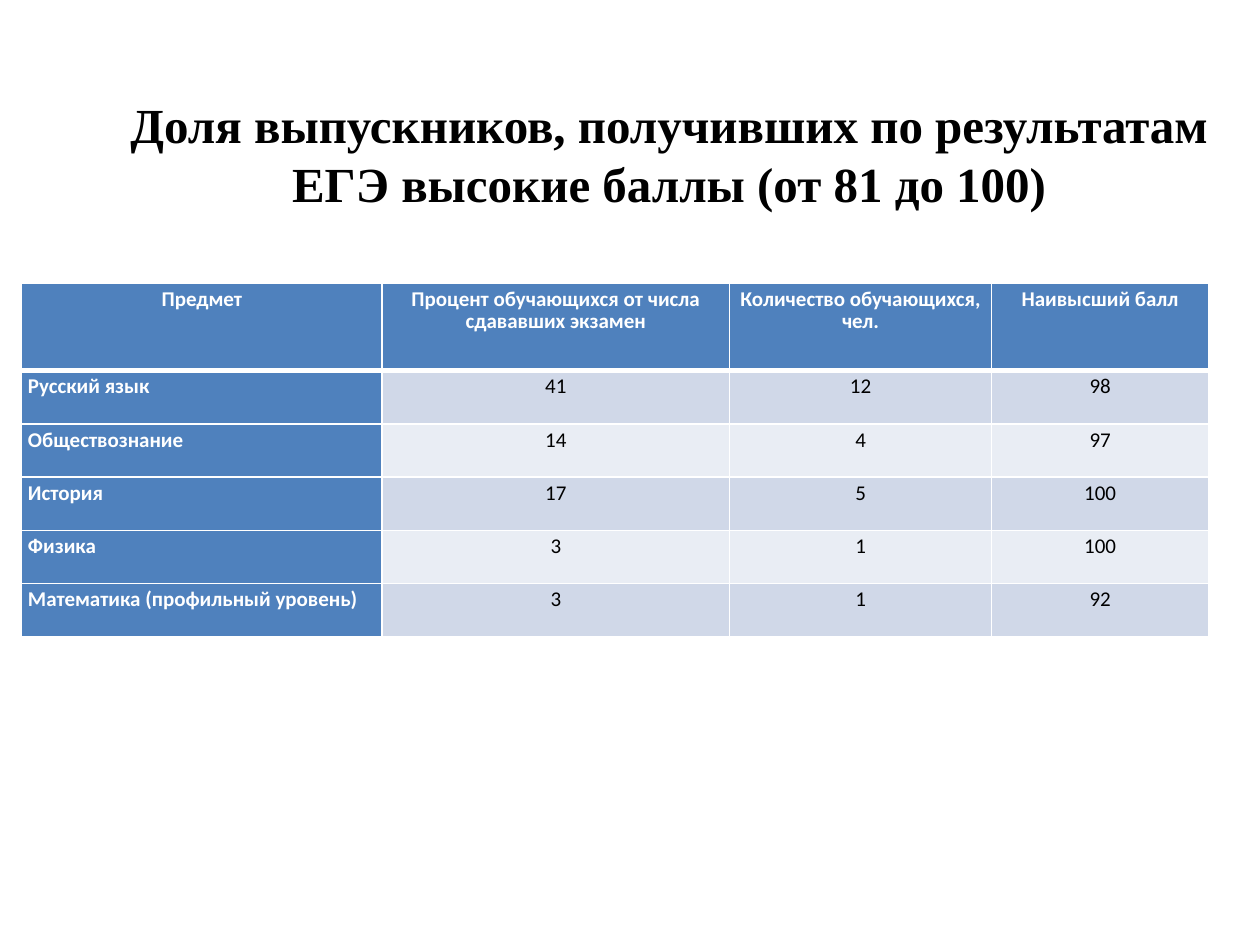
from lxml.etree import SubElement
from pptx import Presentation
from pptx.dml.color import RGBColor
from pptx.enum.text import MSO_ANCHOR as ANCHOR, MSO_AUTO_SIZE as AUTO, PP_ALIGN as ALIGN
from pptx.oxml.ns import qn
from pptx.util import Pt

BLACK = RGBColor(0x00, 0x00, 0x00)
WHITE = RGBColor(0xFF, 0xFF, 0xFF)
BLUE = RGBColor(0x4F, 0x81, 0xBD)
BAND_DARK = RGBColor(0xD0, 0xD8, 0xE8)
BAND_LIGHT = RGBColor(0xE9, 0xED, 0xF4)

TITLE = "Доля выпускников, получивших по результатам ЕГЭ высокие баллы (от 81 до 100)"
ROWS = [
    ("Предмет", "Процент обучающихся\u00a0от числа сдававших экзамен",
     "Количество обучающихся, чел.", "Наивысший балл"),
    ("Русский язык", "41", "12", "98"),
    ("Обществознание", "14", "4", "97"),
    ("История", "17", "5", "100"),
    ("Физика", "3", "1", "100"),
    ("Математика (профильный уровень)", "3", "1", "92"),
]
COL_WIDTHS = (206, 198.5, 149.8, 124)
HEADER_HEIGHT, ROW_HEIGHT = 49.9, 30.4


class SlideBuilder:
    title_font = {"name": "Times New Roman", "size": Pt(28), "bold": True}
    cell_font = {"name": "Calibri", "size": Pt(12)}
    cell_pad = Pt(3.6)

    def __init__(self, prs):
        self.slide = prs.slides.add_slide(prs.slide_layouts[5])

    def text(self, tf, text, align, color, fmt):
        p = tf.paragraphs[0]
        p.alignment = align
        r = p.add_run()
        r.text = text
        for name, value in fmt.items():
            setattr(r.font, name, value)
        r.font.color.rgb = color
        return p

    def title(self, text, left, top, width, height):
        sp = self.slide.shapes.title
        sp.left, sp.top, sp.width, sp.height = map(Pt, (left, top, width, height))
        tf = sp.text_frame
        frame = {"margin_left": 0, "margin_top": 0, "margin_right": 0, "margin_bottom": 0,
                 "word_wrap": True, "auto_size": AUTO.NONE, "vertical_anchor": ANCHOR.TOP}
        for name, value in frame.items():
            setattr(tf, name, value)
        self.text(tf, text, ALIGN.CENTER, BLACK, self.title_font)

    def borders(self, cell, widths):
        tc_pr = cell._tc.get_or_add_tcPr()
        for side, width in zip("LRTB", widths):
            ln = SubElement(tc_pr, qn(f"a:ln{side}"), w=str(Pt(width)))
            fill = SubElement(ln, qn("a:solidFill"))
            SubElement(fill, qn("a:srgbClr"), val=str(WHITE))

    def cell(self, cell, text, row, col):
        head = row == 0 or col == 0
        align = ALIGN.LEFT if col == 0 and row else ALIGN.CENTER
        for side in ("left", "top", "right", "bottom"):
            setattr(cell, f"margin_{side}", self.cell_pad)
        # Borders come before the fill in the cell properties
        self.borders(cell, (1, 1, 3 if row == 1 else 1, 3 if row == 0 else 1))
        cell.fill.solid()
        cell.fill.fore_color.rgb = BLUE if head else BAND_DARK if row % 2 else BAND_LIGHT
        p = self.text(cell.text_frame, text, align, WHITE if head else BLACK,
                      {**self.cell_font, "bold": head})
        p.line_spacing = Pt(12.8)

    def table(self, rows, left, top, col_widths, row_heights):
        size = sum(col_widths), sum(row_heights)
        frame = self.slide.shapes.add_table(len(rows), len(col_widths),
                                            *map(Pt, (left, top, *size)))
        table = frame.table
        table.first_col = True
        for column, width in zip(table.columns, col_widths):
            column.width = Pt(width)
        for i, (row, height) in enumerate(zip(rows, row_heights)):
            table.rows[i].height = Pt(height)
            for j, text in enumerate(row):
                self.cell(table.cell(i, j), text, i, j)


def main():
    prs = Presentation()
    prs.slide_width, prs.slide_height = Pt(720), Pt(540)
    s = SlideBuilder(prs)

    # Title
    s.title(TITLE, 54, 54, 656.6, 101.5)

    # Exam results by subject
    heights = [HEADER_HEIGHT] + [ROW_HEIGHT] * (len(ROWS) - 1)
    s.table(ROWS, 12.4, 162, COL_WIDTHS, heights)

    prs.save("out.pptx")


if __name__ == "__main__":
    main()
